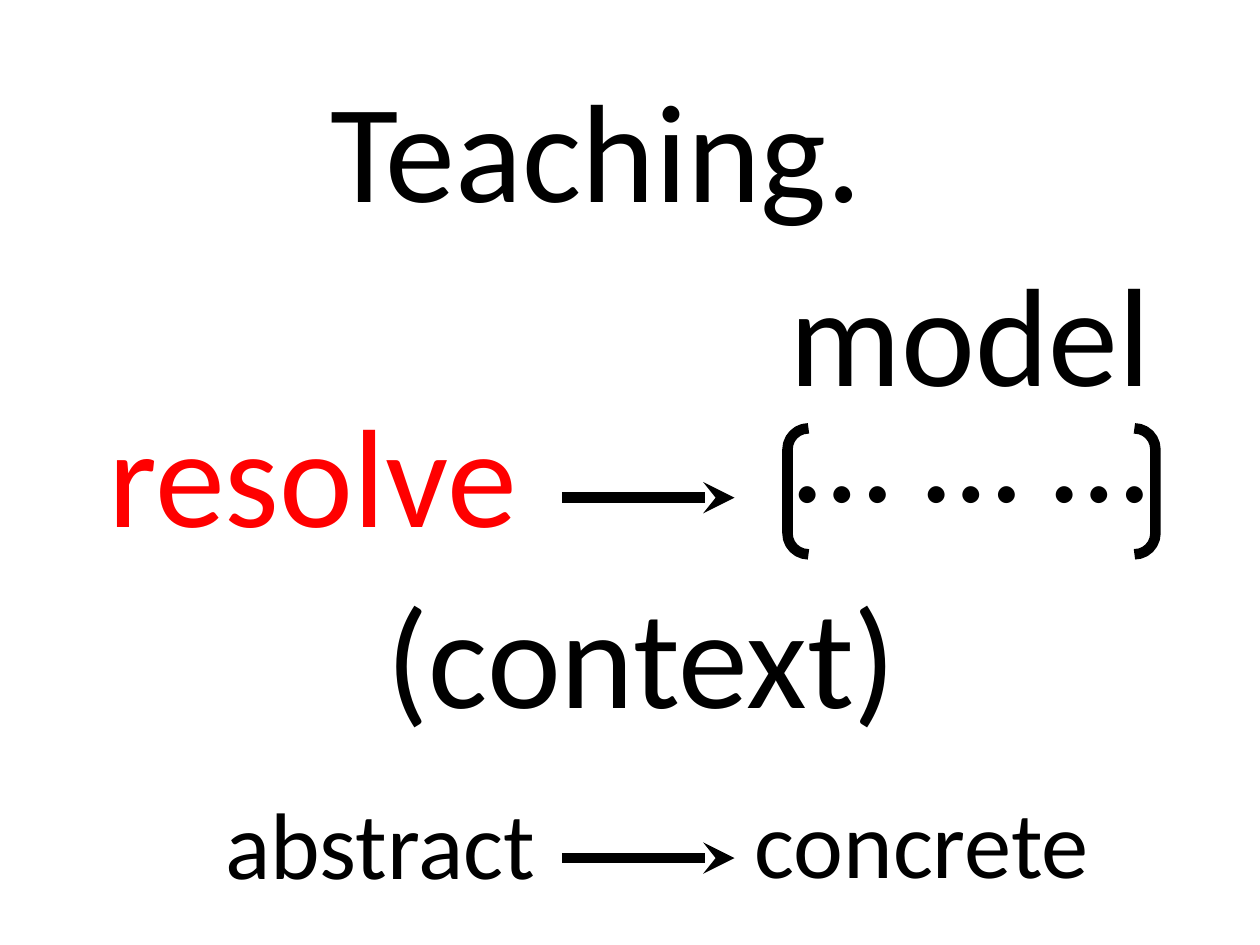
from lxml import etree
from pptx import Presentation
from pptx.dml.color import RGBColor
from pptx.enum.shapes import MSO_CONNECTOR, MSO_SHAPE
from pptx.enum.text import MSO_ANCHOR, MSO_AUTO_SIZE, PP_ALIGN
from pptx.oxml.ns import qn
from pptx.util import Inches, Pt

STRAIGHT = MSO_CONNECTOR.STRAIGHT
BRACKETS = MSO_SHAPE.DOUBLE_BRACKET
LEFT = PP_ALIGN.LEFT
TOP = MSO_ANCHOR.TOP
NO_AUTOFIT = MSO_AUTO_SIZE.NONE

FONT = "Calibri"
BLACK, RED = "000000", "FF0000"
LARGE, SMALL = 80, 54
LINE_WIDTH = 6

# text, (left, top, width, height), size, colour
TITLE = ("Teaching.", (2.52, 0.45, 4.57, 1.45), LARGE, BLACK)
LABELS = [
    ("resolve", (0.76, 3.03, 3.5, 1.45), LARGE, RED),
    ("model", (6.17, 1.91, 3.1, 1.45), LARGE, BLACK),
    ("(context)", (2.97, 4.46, 4.33, 1.45), LARGE, BLACK),
    ("abstract", (1.69, 6.18, 2.79, 0.91), SMALL, BLACK),
    ("concrete", (5.89, 6.17, 3.16, 0.91), SMALL, BLACK),
]
DOTS = ("… … …", (6.21, 2.83, 3.03, 1.45), LARGE, BLACK)
BRACKET_AREA = (6.25, 3.4, 2.92, 1)
ARROW_START, ARROW_END = 4.46, 5.83
ARROW_HEIGHTS = [3.95, 6.81]


def colour(value):
    return RGBColor.from_string(value)


def lengths(values):
    return [Inches(value) for value in values]


def write(box, text, size, text_colour):
    frame = box.text_frame
    frame.text = text
    frame.word_wrap = False
    frame.auto_size = NO_AUTOFIT
    frame.vertical_anchor = TOP
    para = frame.paragraphs[0]
    para.alignment = LEFT
    para.font.name = FONT
    para.font.size = Pt(size)
    para.font.color.rgb = colour(text_colour)


def add_label(shapes, text, area, size, text_colour):
    write(shapes.add_textbox(*lengths(area)), text, size, text_colour)


def style_line(line):
    line.color.rgb = colour(BLACK)
    line.width = Pt(LINE_WIDTH)


def add_arrow(shapes, height):
    arrow = shapes.add_connector(
        STRAIGHT, *lengths((ARROW_START, height, ARROW_END, height)))
    style_line(arrow.line)
    properties = arrow._element.spPr
    etree.SubElement(properties.find(qn("a:ln")), qn("a:tailEnd"), type="stealth")
    etree.SubElement(properties, qn("a:effectLst"))


def main():
    deck = Presentation()
    deck.slide_width, deck.slide_height = Inches(10), Inches(7.5)
    page = deck.slides.add_slide(deck.slide_layouts.get_by_name("Title Only"))

    text, area, size, text_colour = TITLE
    title = page.shapes.title
    title.left, title.top, title.width, title.height = lengths(area)
    write(title, text, size, text_colour)

    for label in LABELS:
        add_label(page.shapes, *label)

    model = page.shapes.add_group_shape()
    add_label(model.shapes, *DOTS)
    brackets = model.shapes.add_shape(BRACKETS, *lengths(BRACKET_AREA))
    brackets.shadow.inherit = False
    brackets.fill.background()
    style_line(brackets.line)

    for height in ARROW_HEIGHTS:
        add_arrow(page.shapes, height)

    deck.save("out.pptx")


if __name__ == "__main__":
    main()
